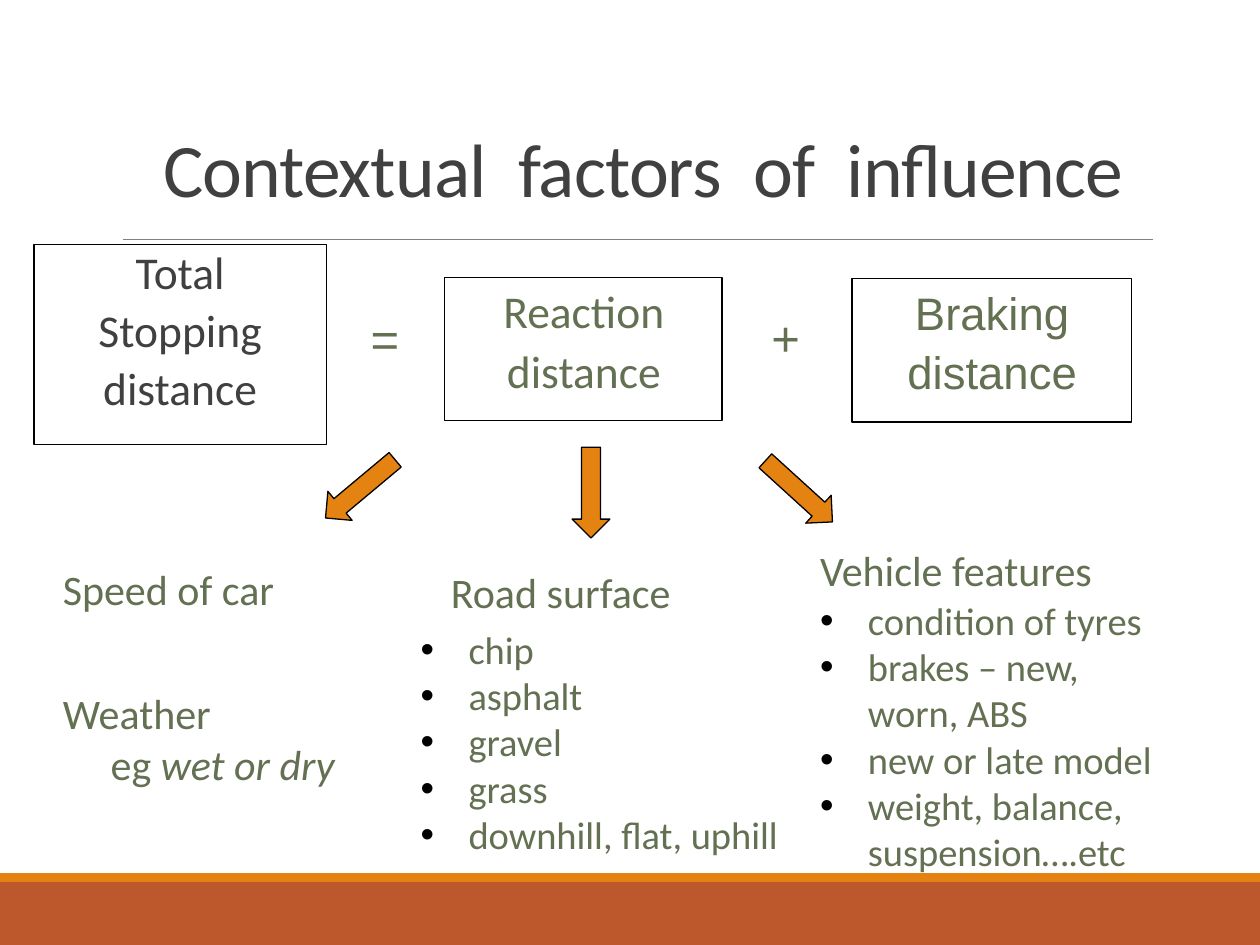
from dataclasses import dataclass

from lxml.etree import SubElement
from pptx import Presentation
from pptx.dml.color import RGBColor
from pptx.enum.shapes import MSO_CONNECTOR, MSO_SHAPE
from pptx.enum.text import MSO_ANCHOR, PP_ALIGN
from pptx.oxml.ns import qn
from pptx.util import Inches, Pt


@dataclass(frozen=True)
class Theme:
    green: str = "637052"
    dark: str = "404040"
    orange: str = "E48312"
    rust: str = "BD582C"
    rule: str = "808080"
    black: str = "000000"
    font: str = "Calibri"
    alternate_font: str = "Arial"
    title_size: float = 43.2
    sign_size: float = 28
    box_size: float = 26
    heading_size: float = 24
    list_size: float = 22


THEME = Theme()


def color(value):
    return RGBColor.from_string(value)


def add_block(slide, preset, place, fill=None, line=None, width=0.75):
    shape = slide.shapes.add_shape(preset, *map(Inches, place))
    shape.shadow.inherit = False
    if fill:
        shape.fill.solid()
        shape.fill.fore_color.rgb = color(fill)
    else:
        shape.fill.background()
    if line:
        shape.line.color.rgb = color(line)
        shape.line.width = Pt(width)
    else:
        shape.line.fill.background()
    return shape


def add_rule(slide, left, right, top):
    line = slide.shapes.add_connector(
        MSO_CONNECTOR.STRAIGHT, Inches(left), Inches(top), Inches(right), Inches(top))
    line.line.color.rgb = color(THEME.rule)
    line.line.width = Pt(0.5)
    SubElement(line._element.spPr, qn("a:effectLst"))


def indent_paragraph(paragraph, margin, hanging, bullet):
    properties = paragraph._p.get_or_add_pPr()
    properties.set("marL", str(Inches(margin)))
    properties.set("indent", str(-Inches(hanging)))
    if bullet:
        bullet_color = SubElement(properties, qn("a:buClr"))
        SubElement(bullet_color, qn("a:srgbClr"), val=THEME.black)
        SubElement(properties, qn("a:buFont"), typeface=THEME.alternate_font)
        SubElement(properties, qn("a:buChar"), char="•")
    else:
        SubElement(properties, qn("a:buNone"))


def add_run(paragraph, text, size, font, ink, italic=False, tracking=None):
    run = paragraph.add_run()
    run.text = text
    run.font.size = Pt(size)
    run.font.name = font
    run.font.color.rgb = color(ink)
    if italic:
        run.font.italic = True
    if tracking is not None:
        run._r.get_or_add_rPr().set("spc", str(round(tracking * 100)))


def write_text(shape, paragraphs, size, font=THEME.font, ink=THEME.green,
               align=PP_ALIGN.LEFT, anchor=MSO_ANCHOR.TOP, margin=0.39, hanging=0.38,
               bullet=False, spacing=None, before=0, after=0, side_inset=0.1, tracking=None):
    """Write paragraphs; \\v breaks a line and a (text, tail) pair has an italic tail."""
    frame = shape.text_frame
    frame.word_wrap = True
    frame.vertical_anchor = anchor
    frame.margin_left = frame.margin_right = Inches(side_inset)
    for index, content in enumerate(paragraphs):
        paragraph = frame.paragraphs[0] if index == 0 else frame.add_paragraph()
        paragraph.alignment = align
        if spacing:
            paragraph.line_spacing = spacing
        paragraph.space_before = Pt(before if index else 0)
        paragraph.space_after = Pt(after)
        indent_paragraph(paragraph, margin, hanging, bullet)
        text, tail = (content, None) if isinstance(content, str) else content
        for number, part in enumerate(text.split("\v")):
            if number:
                paragraph.add_line_break()
            add_run(paragraph, part, size, font, ink, tracking=tracking)
        if tail:
            add_run(paragraph, tail, size, font, ink, italic=True)


def add_text(slide, place, paragraphs, size, **text_format):
    write_text(slide.shapes.add_textbox(*map(Inches, place)), paragraphs, size, **text_format)


def add_framed_text(slide, place, paragraphs, width=0.75, **text_format):
    frame = add_block(slide, MSO_SHAPE.RECTANGLE, place, line=THEME.black, width=width)
    write_text(frame, paragraphs, THEME.box_size, align=PP_ALIGN.CENTER, before=3, **text_format)


def add_arrow(slide, left, top, rotation):
    arrow = add_block(slide, MSO_SHAPE.RIGHT_ARROW, (left, top, 0.72, 0.3),
                      fill=THEME.orange, line=THEME.black)
    arrow.rotation = rotation


def add_backdrop(slide):
    add_block(slide, MSO_SHAPE.RECTANGLE, (0, 7, 10, 0.5), fill=THEME.rust)
    add_block(slide, MSO_SHAPE.RECTANGLE, (0, 6.93, 10, 0.07), fill=THEME.orange)
    add_rule(slide, 0.98, 9.15, 1.9)


def add_equation(slide):
    add_framed_text(slide, (0.27, 1.94, 2.32, 1.59), ["Total", "Stopping", "distance"],
                    ink=THEME.dark, margin=0.1, hanging=0.1, spacing=0.9, after=2, side_inset=0)
    add_framed_text(slide, (3.53, 2.2, 2.2, 1.14), ["Reaction", "distance"])
    add_framed_text(slide, (6.76, 2.21, 2.22, 1.14), ["Braking", "distance"],
                    width=1, font=THEME.alternate_font)
    for sign, left, top in (("=", 2.66, 2.4), ("+", 5.84, 2.39)):
        add_text(slide, (left, top, 0.78, 0.55), [sign], THEME.sign_size,
                 font=THEME.alternate_font, align=PP_ALIGN.CENTER)


def add_factors(slide):
    for arrow in ((2.5, 3.73, 140.1), (4.33, 3.76, 90), (5.98, 3.75, 42.3)):
        add_arrow(slide, *arrow)
    headings = (
        ("Speed of car", (0.39, 4.42, 3.03, 0.77)),
        (("Weather\veg ", "wet or dry"), (0.39, 5.41, 3.03, 1.32)),
        ("Road surface", (3.47, 4.45, 3.25, 0.55)),
        ("Vehicle features", (6.4, 4.27, 3.6, 0.55)),
    )
    for heading, place in headings:
        add_text(slide, place, [heading], THEME.heading_size)
    lists = (
        ((3.23, 4.92, 3.39, 2.83),
         ["chip", "asphalt", "gravel", "grass", "downhill, flat, uphill"]),
        ((6.4, 4.69, 3.6, 2.83),
         ["condition of tyres", "brakes – new,\vworn, ABS", "new or late model",
          "weight, balance, suspension….etc"]),
    )
    for place, items in lists:
        add_text(slide, place, items, THEME.list_size, bullet=True)


def main():
    presentation = Presentation()
    presentation.slide_width, presentation.slide_height = Inches(10), Inches(7.5)
    slide = presentation.slides.add_slide(presentation.slide_layouts[6])
    add_backdrop(slide)
    add_text(slide, (0.94, 0.64, 8.33, 1.1), ["Contextual  factors  of  influence"],
             THEME.title_size, ink=THEME.dark, align=PP_ALIGN.CENTER, anchor=MSO_ANCHOR.BOTTOM,
             margin=0, hanging=0, spacing=0.85, tracking=-0.5)
    add_equation(slide)
    add_factors(slide)
    presentation.save("out.pptx")


if __name__ == "__main__":
    main()
